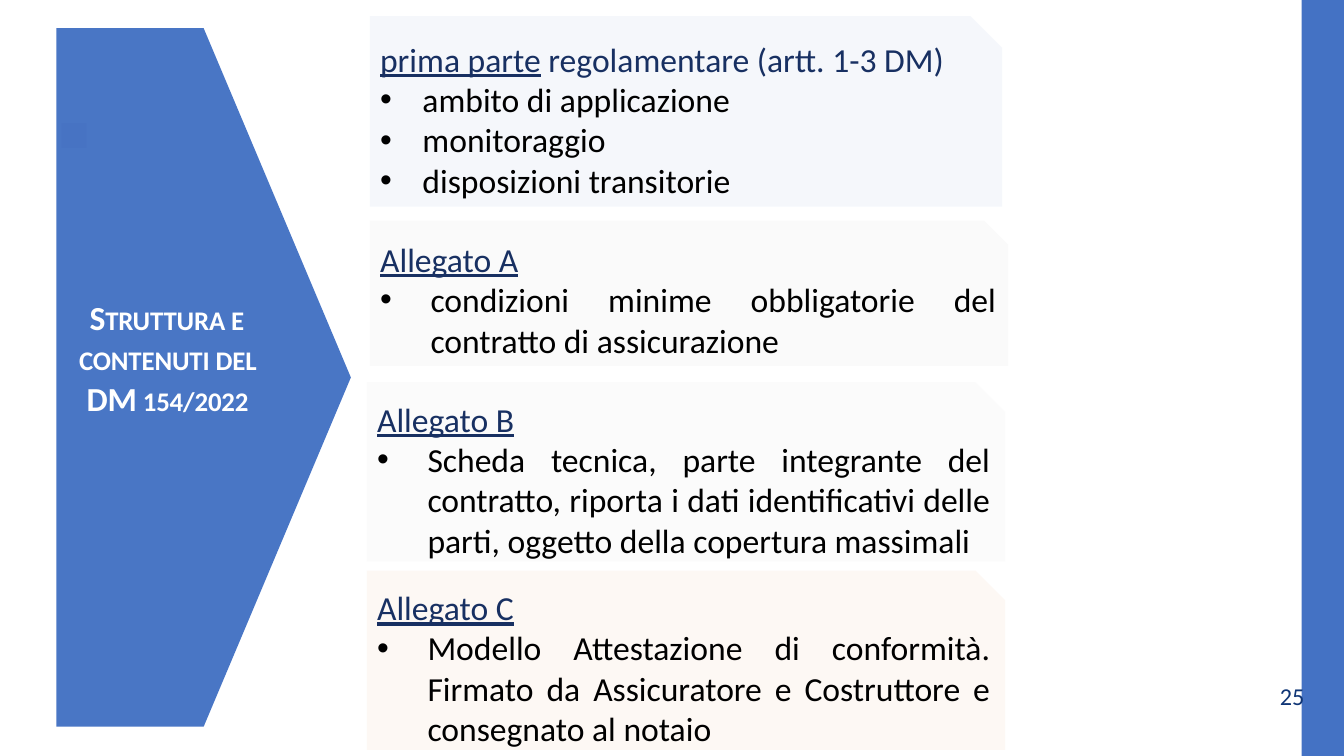
from lxml import etree
from pptx import Presentation
from pptx import util as u
from pptx.dml.color import RGBColor
from pptx.enum import shapes, text
from pptx.oxml.ns import qn

WIDTH, HEIGHT = 13.33, 7.5
BLUE = RGBColor(0x44, 0x72, 0xC4)
GREY = RGBColor(0x93, 0x95, 0x98)
NAVY = RGBColor(0x18, 0x30, 0x62)
PAGE_BLUE = RGBColor(0x10, 0x36, 0x76)
WHITE = RGBColor(0xFF, 0xFF, 0xFF)
BLACK = RGBColor(0, 0, 0)
PALE_BLUE = RGBColor(0xDA, 0xE3, 0xF3)
PALE_GREY = RGBColor(0xED, 0xED, 0xED)
LIGHT_GREY = RGBColor(0xF2, 0xF2, 0xF2)
PEACH = RGBColor(0xFB, 0xE5, 0xD6)
SNIP = 1 / 6

PANELS = [
    ((3.67, 0.16, 6.27, 1.89), PALE_BLUE, 0.42,
     "prima parte", " regolamentare (artt. 1-3 DM)",
     ["ambito di applicazione", "monitoraggio", "disposizioni transitorie"]),
    ((3.67, 2.19, 6.33, 1.44), PALE_GREY, 0.5, "Allegato A", "",
     ["condizioni minime obbligatorie del contratto di assicurazione"]),
    ((3.64, 3.79, 6.33, 1.78), LIGHT_GREY, 0.5, "Allegato B", "",
     ["Scheda tecnica, parte integrante del contratto, riporta i dati "
      "identificativi delle parti, oggetto della copertura massimali"]),
    ((3.64, 5.66, 6.33, 1.78), PEACH, 0.5, "Allegato C", "",
     ["Modello Attestazione di conformità. Firmato da Assicuratore e "
      "Costruttore e consegnato al notaio"]),
]


def add_block(slide, kind, box, color, opacity=100):
    block = slide.shapes.add_shape(kind, *map(u.Inches, box))
    block.shadow.inherit = False
    block.fill.solid()
    block.fill.fore_color.rgb = color
    block.line.fill.background()
    if opacity < 100:
        tint = block.fill._xPr.find(".//" + qn("a:srgbClr"))
        etree.SubElement(tint, qn("a:alpha"), val=str(opacity * 1000))
    return block


def prepare_frame(holder, box, left_inset=0):
    holder.left, holder.top, holder.width, holder.height = map(u.Inches, box)
    frame = holder.text_frame
    frame.word_wrap = True
    frame.auto_size = text.MSO_AUTO_SIZE.NONE
    frame.vertical_anchor = text.MSO_ANCHOR.MIDDLE
    frame.margin_left = u.Inches(left_inset)
    frame.margin_top = frame.margin_right = frame.margin_bottom = 0
    return frame


def add_paragraph(frame, first=False, align=text.PP_ALIGN.CENTER, indent=0):
    line = frame.paragraphs[0] if first else frame.add_paragraph()
    line.alignment = align
    line.line_spacing = 1.0
    line.space_before = line.space_after = u.Pt(0)
    props = line._p.get_or_add_pPr()
    props.set("marL", str(u.Inches(indent)))
    props.set("indent", str(-u.Inches(indent)))
    if indent:
        etree.SubElement(props, qn("a:buFont"), typeface="Arial")
        etree.SubElement(props, qn("a:buChar"), char="•")
    else:
        etree.SubElement(props, qn("a:buNone"))
    return line


def add_text(line, words, size=24, color=BLACK, bold=False,
             underline=False, small_caps=False):
    run = line.add_run()
    run.text = words
    font = run.font
    font.name, font.size, font.bold = "Calibri", u.Pt(size), bold
    font.underline = underline
    font.color.rgb = color
    if small_caps:
        props = run._r.get_or_add_rPr()
        props.set("cap", "small")
        props.set("spc", "-10")


def add_heading_arrow(slide, box):
    left, top, width, height = box
    add_block(slide, shapes.MSO_SHAPE.PENTAGON, box, BLUE, 97)
    title = slide.shapes.title
    slide.shapes._spTree.append(title._element)
    frame = prepare_frame(title, (left, top, width * 0.75, height - 0.4))
    for index, words in enumerate(["Struttura e contenuti del", "DM 154/2022"]):
        line = add_paragraph(frame, first=index == 0)
        add_text(line, words, color=WHITE, bold=True, small_caps=True)


def add_panel(slide, body, box, color, indent, heading, rest, items):
    left, top, width, height = box
    add_block(slide, shapes.MSO_SHAPE.SNIP_1_RECTANGLE, box, color, 25)
    slide.shapes._spTree.append(body._element)
    inset = height * SNIP / 2
    frame = prepare_frame(
        body, (left, top + inset, width - inset, height - inset), 0.1)
    justified = text.PP_ALIGN.JUSTIFY
    line = add_paragraph(frame, first=True, align=justified)
    add_text(line, heading, color=NAVY, underline=True)
    if rest:
        add_text(line, rest, color=NAVY)
    for item in items:
        add_text(add_paragraph(frame, align=justified, indent=indent), item)


def add_page_number(slide, number, box):
    holder = slide.shapes.add_textbox(*map(u.Inches, box))
    frame = prepare_frame(holder, box)
    add_text(add_paragraph(frame, first=True), number, size=17.3, color=PAGE_BLUE)


def main():
    deck = Presentation()
    deck.slide_width, deck.slide_height = u.Inches(WIDTH), u.Inches(HEIGHT)
    slide = deck.slides.add_slide(deck.slide_layouts.get_by_name("Comparison"))
    bodies = [holder for holder in slide.placeholders
              if holder.placeholder_format.idx != 0]

    rectangle = shapes.MSO_SHAPE.RECTANGLE
    add_block(slide, rectangle, (WIDTH - 0.42, 0, 0.42, HEIGHT), BLUE)
    add_block(slide, rectangle, (0.61, 1.22, 0.25, 0.25), GREY, 80)
    add_page_number(slide, "25", (12.56, 6.75, 0.51, 0.31))
    add_heading_arrow(slide, (0.56, 0.28, 2.92, 6.93))
    for body, panel in zip(bodies, PANELS):
        add_panel(slide, body, *panel)

    deck.save("out.pptx")


if __name__ == "__main__":
    main()
